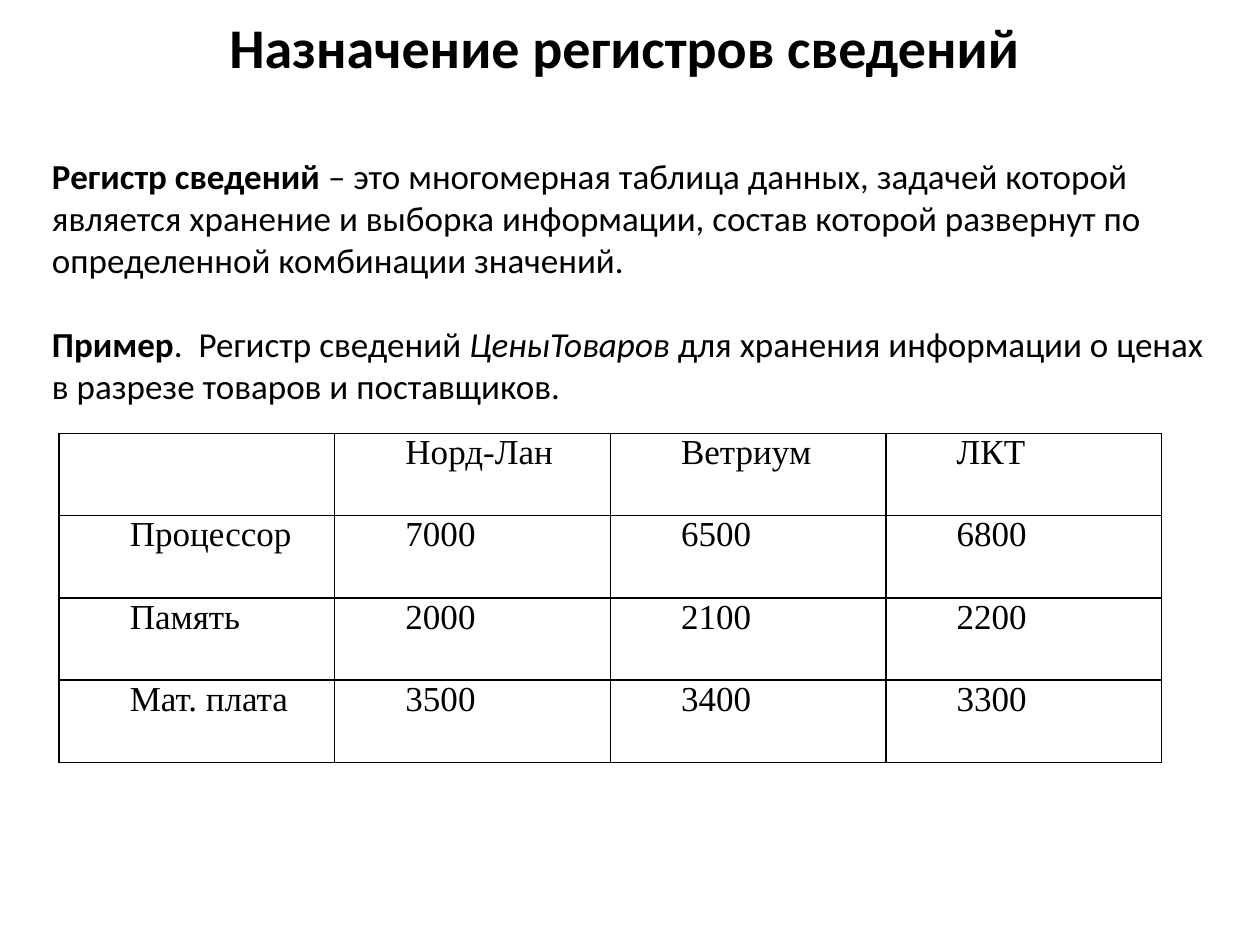
import pptx
import pptx.dml.color
import pptx.enum.text
import pptx.oxml
import pptx.oxml.ns
import pptx.util

Pt = pptx.util.Pt
PP_ALIGN = pptx.enum.text.PP_ALIGN
MSO_ANCHOR = pptx.enum.text.MSO_ANCHOR
MSO_AUTO_SIZE = pptx.enum.text.MSO_AUTO_SIZE

BLACK = pptx.dml.color.RGBColor(0x00, 0x00, 0x00)
TITLE_FONT = {"name": "Calibri", "size": Pt(32), "bold": True}
BODY_FONT = {"name": "Calibri", "size": Pt(20), "bold": False, "italic": False}
CELL_FONT = {"name": "Times New Roman", "size": Pt(20)}

TITLE = "Назначение регистров сведений"
BODY = [
    [("Регистр сведений ", {"bold": True}),
     ("– это многомерная таблица данных, задачей которой является хранение "
      "и выборка информации, состав которой развернут по определенной "
      "комбинации значений.", {})],
    [("Пример", {"bold": True}),
     (".  Регистр сведений ", {}),
     ("ЦеныТоваров", {"italic": True}),
     (" для хранения информации о ценах в разрезе товаров и поставщиков.", {})],
]
PRICES = [
    ["", "Норд-Лан", "Ветриум", "ЛКТ"],
    ["Процессор", "7000", "6500", "6800"],
    ["Память", "2000", "2100", "2200"],
    ["Мат. плата", "3500", "3400", "3300"],
]


def set_attrs(obj, values):
    for name, value in values.items():
        setattr(obj, name, value)


def place(sp, box):
    set_attrs(sp, dict(zip(("left", "top", "width", "height"), map(Pt, box))))


def add_run(p, text, font):
    r = p.add_run()
    r.text = text
    set_attrs(r.font, font)
    r.font.color.rgb = BLACK


def set_indent(p, first):
    pPr = p._p.get_or_add_pPr()
    pPr.set("marL", "0")
    pPr.set("indent", str(Pt(first)))
    return pPr


def add_title(sp, box):
    place(sp, box)
    tf = sp.text_frame
    set_attrs(tf, {"auto_size": MSO_AUTO_SIZE.NONE, "word_wrap": True,
                   "vertical_anchor": MSO_ANCHOR.TOP})
    p = tf.paragraphs[0]
    p.alignment = PP_ALIGN.CENTER
    add_run(p, TITLE, TITLE_FONT)


def add_body(sp, box):
    place(sp, box)
    tf = sp.text_frame
    set_attrs(tf, {"auto_size": MSO_AUTO_SIZE.NONE, "word_wrap": True,
                   "vertical_anchor": MSO_ANCHOR.TOP})
    for i, runs in enumerate(BODY):
        p = tf.add_paragraph() if i else tf.paragraphs[0]
        set_attrs(p, {"space_before": Pt(24 if i else 0), "space_after": Pt(0)})
        pPr = set_indent(p, 0)
        pPr.append(pptx.oxml.parse_xml(
            f"<a:buNone {pptx.oxml.ns.nsdecls('a')}/>"))
        for text, style in runs:
            add_run(p, text, BODY_FONT | style)


def add_borders(cell):
    tcPr = cell._tc.get_or_add_tcPr()
    for side in ("lnL", "lnR", "lnT", "lnB"):
        tcPr.append(pptx.oxml.parse_xml(
            f'<a:{side} {pptx.oxml.ns.nsdecls("a")} w="{Pt(1)}">'
            f'<a:solidFill><a:srgbClr val="{BLACK}"/></a:solidFill></a:{side}>'))


def add_price_table(slide, box):
    rows, cols = len(PRICES), len(PRICES[0])
    table = slide.shapes.add_table(rows, cols, *map(Pt, box)).table
    set_attrs(table, {"first_row": False, "horz_banding": False})
    for i, values in enumerate(PRICES):
        for j, text in enumerate(values):
            cell = table.cell(i, j)
            add_borders(cell)
            cell.fill.background()
            set_attrs(cell, {"margin_left": Pt(5), "margin_right": Pt(5),
                             "margin_top": 0, "margin_bottom": 0})
            if text:
                p = cell.text_frame.paragraphs[0]
                p.alignment = PP_ALIGN.JUSTIFY
                set_indent(p, 35.4)
                add_run(p, text, CELL_FONT)


def main():
    prs = pptx.Presentation()
    set_attrs(prs, {"slide_width": Pt(720), "slide_height": Pt(540)})
    slide = prs.slides.add_slide(prs.slide_layouts[1])
    add_title(slide.shapes.title, (48, 3.6, 618, 46))
    add_body(slide.placeholders[1], (22.5, 84.4, 680.5, 152.6))
    add_price_table(slide, (33.8, 247.6, 630, 188))
    prs.save("out.pptx")


if __name__ == "__main__":
    main()
